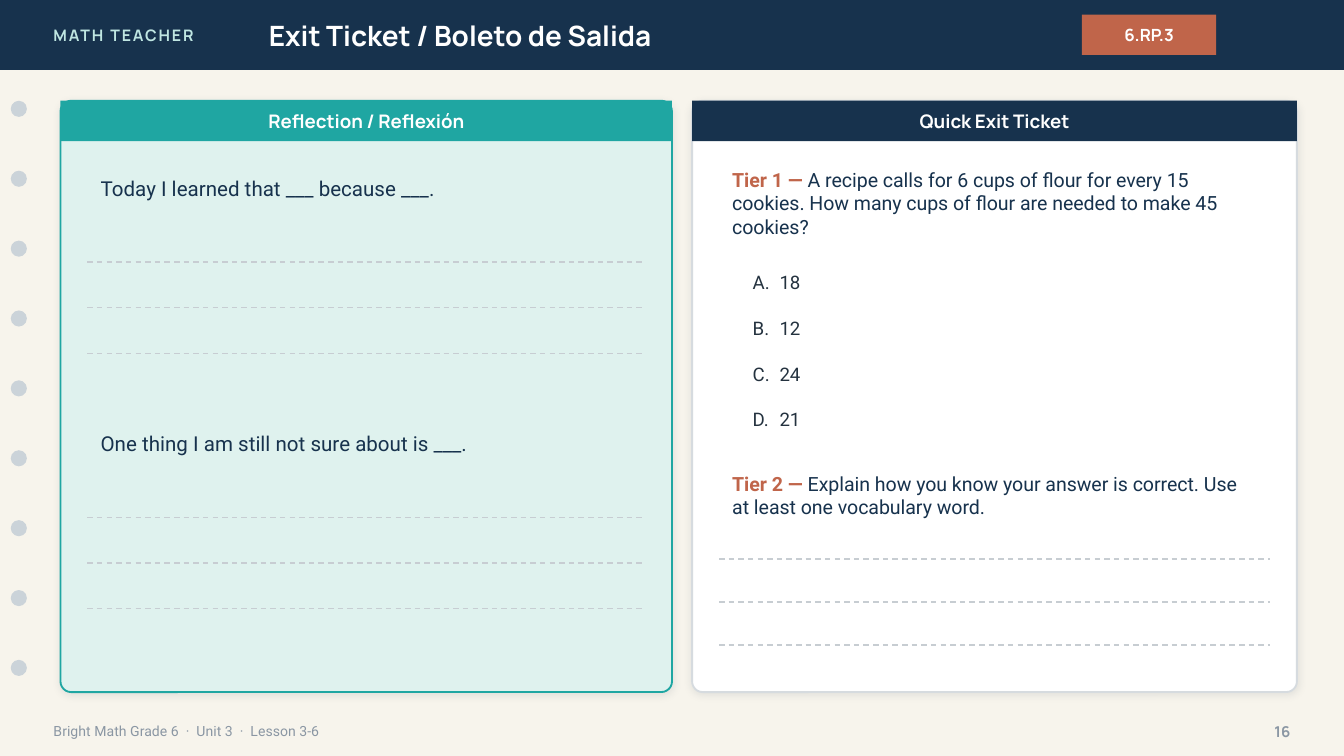
from dataclasses import dataclass

import lxml.etree
import pptx
import pptx.dml.color
import pptx.enum.dml
import pptx.enum.shapes
import pptx.enum.text
import pptx.oxml
import pptx.oxml.ns
import pptx.util

EMU_PER_PX = 9144  # 100 px to the inch
NAVY, TEAL, RUST, WHITE = "17324D", "1FA6A2", "C0654A", "FFFFFF"
GREY, RULE, INK = "8A96A3", "C7CDD2", "24323F"
HEADING_FONT, BODY_FONT = "Manrope", "Roboto"
ALIGN = pptx.enum.text.PP_ALIGN
SHAPE = pptx.enum.shapes.MSO_SHAPE
PANEL_TOP, PANEL_HEIGHT, PANEL_HEADER = 75, 440, 30


@dataclass(frozen=True)
class Box:
    left: int
    top: int
    width: int
    height: int

    def emu(self) -> list[int]:
        return [px(value) for value in (self.left, self.top, self.width, self.height)]


@dataclass(frozen=True)
class Panel:
    heading: str
    left: int
    width: int
    fill: str
    outline: str
    header: str


@dataclass(frozen=True)
class Prompt:
    text: str
    top: int


@dataclass(frozen=True)
class Tier:
    label: str
    question: str
    top: int
    height: int


PANELS = [
    Panel("Reflection / Reflexión", 45, 455, "DFF2EE", TEAL, TEAL),
    Panel("Quick Exit Ticket", 515, 450, WHITE, "D6DBDF", NAVY),
]
PROMPTS = [
    Prompt("Today I learned that ___ because ___.", 120),
    Prompt("One thing I am still not sure about is ___.", 310),
]
TIERS = [
    Tier("Tier 1 — ", "A recipe calls for 6 cups of flour for every 15 cookies. "
         "How many cups of flour are needed to make 45 cookies?", 120, 70),
    Tier("Tier 2 — ", "Explain how you know your answer is correct. "
         "Use at least one vocabulary word.", 346, 55),
]
ANSWERS = ["18", "12", "24", "21"]


def px(value: int) -> int:
    return value * EMU_PER_PX


def rgb(color: str) -> pptx.dml.color.RGBColor:
    return pptx.dml.color.RGBColor.from_string(color)


def write(paragraph, text: str, *, size: float, color: str, font=BODY_FONT,
          bold=False, align=ALIGN.LEFT, tracking=0) -> None:
    """Add one formatted run; tracking is in hundredths of a point."""
    paragraph.alignment = align
    run = paragraph.add_run()
    run.text = text
    run.font.name, run.font.size, run.font.bold = font, pptx.util.Pt(size), bold
    run.font.color.rgb = rgb(color)
    if tracking:
        run.font._element.set("spc", str(tracking))


def set_frame(shape, middle=True):
    """Prepare the text frame and return its first paragraph."""
    frame = shape.text_frame
    frame.word_wrap = True
    frame.auto_size = pptx.enum.text.MSO_AUTO_SIZE.NONE
    anchors = pptx.enum.text.MSO_ANCHOR
    frame.vertical_anchor = anchors.MIDDLE if middle else anchors.TOP
    return frame.paragraphs[0]


def add_text(slide, box: Box, middle=True):
    return set_frame(slide.shapes.add_textbox(*box.emu()), middle)


def add_shape(slide, kind, box: Box, fill: str, outline: str = ""):
    shape = slide.shapes.add_shape(kind, *box.emu())
    shape.shadow.inherit = False
    shape.fill.solid()
    shape.fill.fore_color.rgb = rgb(fill)
    if outline:
        shape.line.color.rgb = rgb(outline)
        shape.line.width = pptx.util.Pt(1)
    else:
        shape.line.fill.background()
    return shape


def add_label(slide, box: Box, fill: str, text: str, size: float) -> None:
    shape = add_shape(slide, SHAPE.RECTANGLE, box, fill)
    write(set_frame(shape), text, size=size, color=WHITE, font=HEADING_FONT,
          bold=True, align=ALIGN.CENTER)


def add_soft_shadow(shape) -> None:
    effects = shape.element.spPr.find(pptx.oxml.ns.qn("a:effectLst"))
    effects.append(pptx.oxml.parse_xml(
        f'<a:outerShdw {pptx.oxml.ns.nsdecls("a")} blurRad="50800" dist="12700" '
        'dir="5400000" algn="bl" rotWithShape="0"><a:srgbClr val="1C2E42">'
        '<a:alpha val="10000"/></a:srgbClr></a:outerShdw>'))


def add_panel(slide, panel: Panel) -> None:
    card = add_shape(slide, SHAPE.ROUNDED_RECTANGLE,
                     Box(panel.left, PANEL_TOP, panel.width, PANEL_HEIGHT),
                     panel.fill, panel.outline)
    card.adjustments[0] = 0.018
    add_soft_shadow(card)
    add_label(slide, Box(panel.left, PANEL_TOP, panel.width, PANEL_HEADER),
              panel.header, panel.heading, 10)


def add_writing_lines(slide, left: int, width: int, top: int, gap: int) -> None:
    for y in range(top, top + 3 * gap, gap):
        line = slide.shapes.add_connector(
            pptx.enum.shapes.MSO_CONNECTOR.STRAIGHT,
            px(left), px(y), px(left + width), px(y))
        line.line.color.rgb = rgb(RULE)
        line.line.width = pptx.util.Pt(0.75)
        line.line.dash_style = pptx.enum.dml.MSO_LINE.DASH
        lxml.etree.SubElement(line.element.spPr, pptx.oxml.ns.qn("a:effectLst"))


def place(placeholder, box: Box):
    """Move a placeholder to its box, in front of what is drawn so far."""
    placeholder.left, placeholder.top, placeholder.width, placeholder.height = box.emu()
    placeholder.element.getparent().append(placeholder.element)
    return set_frame(placeholder)


def add_answers(placeholder) -> None:
    """Fill the body placeholder with a lettered list."""
    paragraph = place(placeholder, Box(550, 195, 390, 132))
    for index, answer in enumerate(ANSWERS):
        if index:
            paragraph = placeholder.text_frame.add_paragraph()
        properties = paragraph._p.get_or_add_pPr()
        properties.set("marL", str(px(20)))
        properties.set("indent", str(-px(20)))
        lxml.etree.SubElement(properties, pptx.oxml.ns.qn("a:buFont"), typeface=BODY_FONT)
        lxml.etree.SubElement(properties, pptx.oxml.ns.qn("a:buAutoNum"), type="alphaUcPeriod")
        paragraph.space_before = pptx.util.Pt(12.4 if index else 0)
        write(paragraph, answer, size=10, color=INK)


def main() -> None:
    presentation = pptx.Presentation()
    presentation.slide_width = px(1000)
    presentation.slide_height = px(1000) * 9 // 16
    slide = presentation.slides.add_slide(presentation.slide_layouts[1])
    title, body = slide.placeholders
    slide.background.fill.solid()
    slide.background.fill.fore_color.rgb = rgb("F7F4EC")

    add_shape(slide, SHAPE.RECTANGLE, Box(0, 0, 1000, 52), NAVY)
    write(add_text(slide, Box(30, 0, 240, 52)), "MATH TEACHER", size=8.5,
          color="BFE6E2", font=HEADING_FONT, bold=True, tracking=100)
    write(place(title, Box(190, 0, 560, 52)), "Exit Ticket / Boleto de Salida",
          size=15, color=WHITE, font=HEADING_FONT, bold=True)
    add_label(slide, Box(805, 11, 100, 30), RUST, "6.RP.3", 9)

    for index in range(9):
        add_shape(slide, SHAPE.OVAL, Box(8, 75 + 52 * index, 12, 12), "CBD3D9")

    write(add_text(slide, Box(30, 530, 700, 28)),
          "Bright Math Grade 6  ·  Unit 3  ·  Lesson 3-6", size=7.5, color=GREY)
    write(add_text(slide, Box(920, 530, 50, 28)), "16", size=8, color=GREY,
          font=HEADING_FONT, bold=True, align=ALIGN.RIGHT)

    for panel in PANELS:
        add_panel(slide, panel)
    for prompt in PROMPTS:
        write(add_text(slide, Box(65, prompt.top, 415, 40)), prompt.text,
              size=11, color=NAVY)
        add_writing_lines(slide, 65, 415, prompt.top + 75, 34)
    for tier in TIERS:
        paragraph = add_text(slide, Box(535, tier.top, 410, tier.height), middle=False)
        write(paragraph, tier.label, size=10.5, color=RUST, bold=True)
        write(paragraph, tier.question, size=10.5, color=NAVY)
    add_answers(body)
    add_writing_lines(slide, 535, 410, 416, 32)
    presentation.save("out.pptx")


if __name__ == "__main__":
    main()
